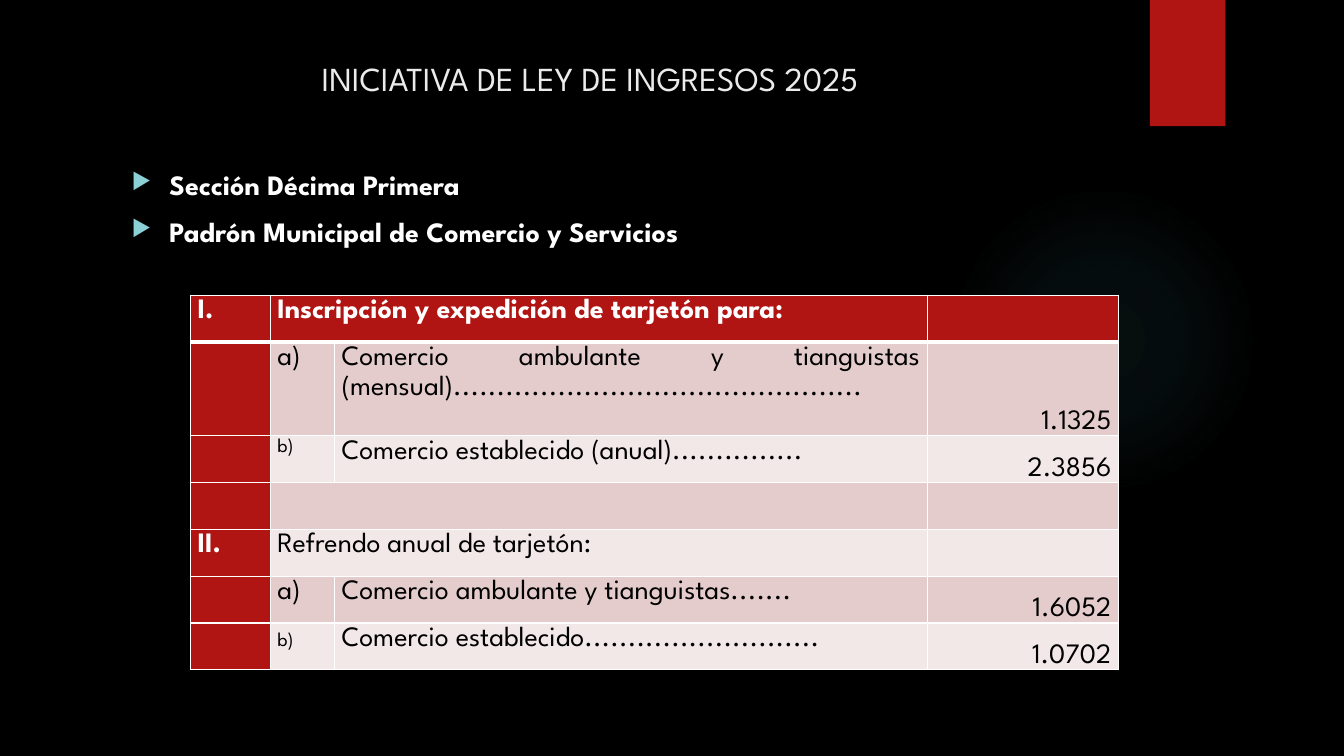
import lxml.etree
import pptx
import pptx.dml.color
import pptx.enum.shapes
import pptx.enum.text
import pptx.oxml.ns
import pptx.util

Cm = pptx.util.Cm
Pt = pptx.util.Pt
RGBColor = pptx.dml.color.RGBColor
Align = pptx.enum.text.PP_ALIGN
Anchor = pptx.enum.text.MSO_ANCHOR
Preset = pptx.enum.shapes.MSO_SHAPE
qn = pptx.oxml.ns.qn

FONT = "League Spartan"
BLACK = RGBColor(0x00, 0x00, 0x00)
WHITE = RGBColor(0xFF, 0xFF, 0xFF)
TITLE_GRAY = RGBColor(0xEB, 0xEB, 0xEB)
RED = RGBColor(0xB0, 0x15, 0x13)
DARK_BAND = RGBColor(0xE4, 0xCC, 0xCC)
LIGHT_BAND = RGBColor(0xF2, 0xE8, 0xE7)
GLOW = RGBColor(0x50, 0xB9, 0xC1)
BULLET = RGBColor(0x8A, 0xD0, 0xD6)

COLUMN_WIDTHS = (2.01, 1.62, 14.94, 4.82)
ROW_HEIGHT = 1.18
FEES = (
    ("I.", "Inscripción y expedición de tarjetón para:", None, ""),
    ("", "a)", "Comercio ambulante y tianguistas (mensual)" + "." * 47, "1.1325"),
    ("", "b)", "Comercio establecido (anual)" + "." * 15, "2.3856"),
    ("", "", None, ""),
    ("II.", "Refrendo anual de tarjetón:", None, ""),
    ("", "a)", "Comercio ambulante y tianguistas" + "." * 7, "1.6052"),
    ("", "b)", "Comercio establecido" + "." * 27, "1.0702"),
)
TALL_ROW = 1
LAST_ROW = len(FEES) - 1


def add_child(parent, tag, **attributes):
    child = lxml.etree.SubElement(parent, qn(tag))
    for name, value in attributes.items():
        child.set(name, str(value))
    return child


def add_run(paragraph, text, size, color, bold=False):
    run = paragraph.add_run()
    run.text = text
    run.font.name = FONT
    run.font.size = Pt(size)
    run.font.bold = bold
    run.font.color.rgb = color


def add_plain_shape(slide, preset, left, top, width, height):
    shape = slide.shapes.add_shape(preset, Cm(left), Cm(top), Cm(width), Cm(height))
    shape.shadow.inherit = False
    shape.line.fill.background()
    return shape


def add_text_frame(slide, left, top, width, height, anchor):
    box = slide.shapes.add_textbox(Cm(left), Cm(top), Cm(width), Cm(height))
    box.text_frame.word_wrap = True
    box.text_frame.vertical_anchor = anchor
    return box.text_frame


def draw_glow(slide, left, top, size):
    glow = add_plain_shape(slide, Preset.OVAL, left, top, size, size)
    glow.fill.gradient()
    gradient = glow.element.spPr.find(qn("a:gradFill"))
    for child in list(gradient):
        gradient.remove(child)
    stops = add_child(gradient, "a:gsLst")
    for position, opacity in ((0, 7), (36, 6), (69, 0), (100, 0)):
        stop = add_child(stops, "a:gs", pos=position * 1000)
        color = add_child(stop, "a:srgbClr", val=GLOW)
        add_child(color, "a:alpha", val=opacity * 1000)
    circle = add_child(gradient, "a:path", path="circle")
    add_child(circle, "a:fillToRect", l=50000, t=50000, r=50000, b=50000)


def draw_ribbon(slide, left, top, width, height):
    ribbon = add_plain_shape(slide, Preset.RECTANGLE, left, top, width, height)
    ribbon.fill.solid()
    ribbon.fill.fore_color.rgb = RED


def draw_title(slide, left, top, width, height):
    frame = add_text_frame(slide, left, top, width, height, Anchor.MIDDLE)
    paragraph = frame.paragraphs[0]
    paragraph.alignment = Align.CENTER
    add_run(paragraph, "INICIATIVA DE LEY DE INGRESOS 2025", 24, TITLE_GRAY)


def draw_section(slide, left, top, width, height):
    frame = add_text_frame(slide, left, top, width, height, Anchor.TOP)
    headings = ("Sección Décima Primera", "Padrón Municipal de Comercio y Servicios")
    for index, heading in enumerate(headings):
        paragraph = frame.add_paragraph() if index else frame.paragraphs[0]
        properties = paragraph._p.get_or_add_pPr()
        indent = Cm(0.95)
        properties.set("marL", str(indent))
        properties.set("indent", str(-indent))
        color = add_child(properties, "a:buClr")
        add_child(color, "a:srgbClr", val=BULLET)
        add_child(properties, "a:buSzPct", val=80000)
        add_child(properties, "a:buChar", char="▶")
        if index:
            paragraph.space_before = Pt(10)
        add_run(paragraph, heading, 20, WHITE, True)


def set_borders(cell, top, bottom):
    properties = cell._tc.get_or_add_tcPr()
    sides = (("a:lnL", 1), ("a:lnR", 1), ("a:lnT", top), ("a:lnB", bottom))
    for index, (tag, points) in enumerate(sides):
        line = lxml.etree.Element(qn(tag), w=str(Pt(points)))
        fill = add_child(line, "a:solidFill")
        add_child(fill, "a:srgbClr", val=WHITE)
        properties.insert(index, line)


def fill_cell(cell, row, column, text):
    header = row == 0
    strong = header or column == 0
    band = DARK_BAND if row % 2 else LIGHT_BAND
    cell.fill.solid()
    cell.fill.fore_color.rgb = RED if strong else band
    cell.margin_left = cell.margin_right = Cm(0.18)
    cell.margin_top = cell.margin_bottom = 0
    set_borders(cell, 3 if row == 1 else 1, 3 if header else 1)
    is_fee = column == len(COLUMN_WIDTHS) - 1
    cell.vertical_anchor = Anchor.BOTTOM if is_fee else Anchor.TOP
    paragraph = cell.text_frame.paragraphs[0]
    paragraph.alignment = Align.RIGHT if is_fee else Align.JUSTIFY
    paragraph.line_spacing = 1.15
    if not text:
        paragraph.font.size = Pt(20)
        return
    size = 14 if text == "b)" else 20
    add_run(paragraph, text, size, WHITE if strong else BLACK, strong)
    if text == "b)" and row == LAST_ROW:
        add_run(paragraph, " ", 20, BLACK)


def draw_fees(slide, left, top):
    heights = [ROW_HEIGHT * (2 if row == TALL_ROW else 1) for row in range(len(FEES))]
    frame = slide.shapes.add_table(
        len(FEES), len(COLUMN_WIDTHS), Cm(left), Cm(top),
        Cm(sum(COLUMN_WIDTHS)), Cm(sum(heights)))
    table = frame.table
    for column, width in zip(table.columns, COLUMN_WIDTHS):
        column.width = Cm(width)
    for row, height in zip(table.rows, heights):
        row.height = Cm(height)
    for row, entries in enumerate(FEES):
        if entries[2] is None:
            table.cell(row, 1).merge(table.cell(row, 2))
        for column, text in enumerate(entries):
            fill_cell(table.cell(row, column), row, column, text)


def main():
    deck = pptx.Presentation()
    deck.slide_width = Cm(33.87)
    deck.slide_height = Cm(19.05)
    slide = deck.slides.add_slide(deck.slide_layouts[6])
    slide.background.fill.solid()
    slide.background.fill.fore_color.rgb = BLACK
    draw_glow(slide, 23.9, 4.65, 7.82)
    draw_ribbon(slide, 28.98, 0, 1.9, 3.18)
    draw_title(slide, 1.8, 1.27, 26.14, 1.4)
    draw_section(slide, 3.07, 4.09, 24.84, 13.28)
    draw_fees(slide, 4.8, 7.44)
    deck.save("out.pptx")


if __name__ == "__main__":
    main()
